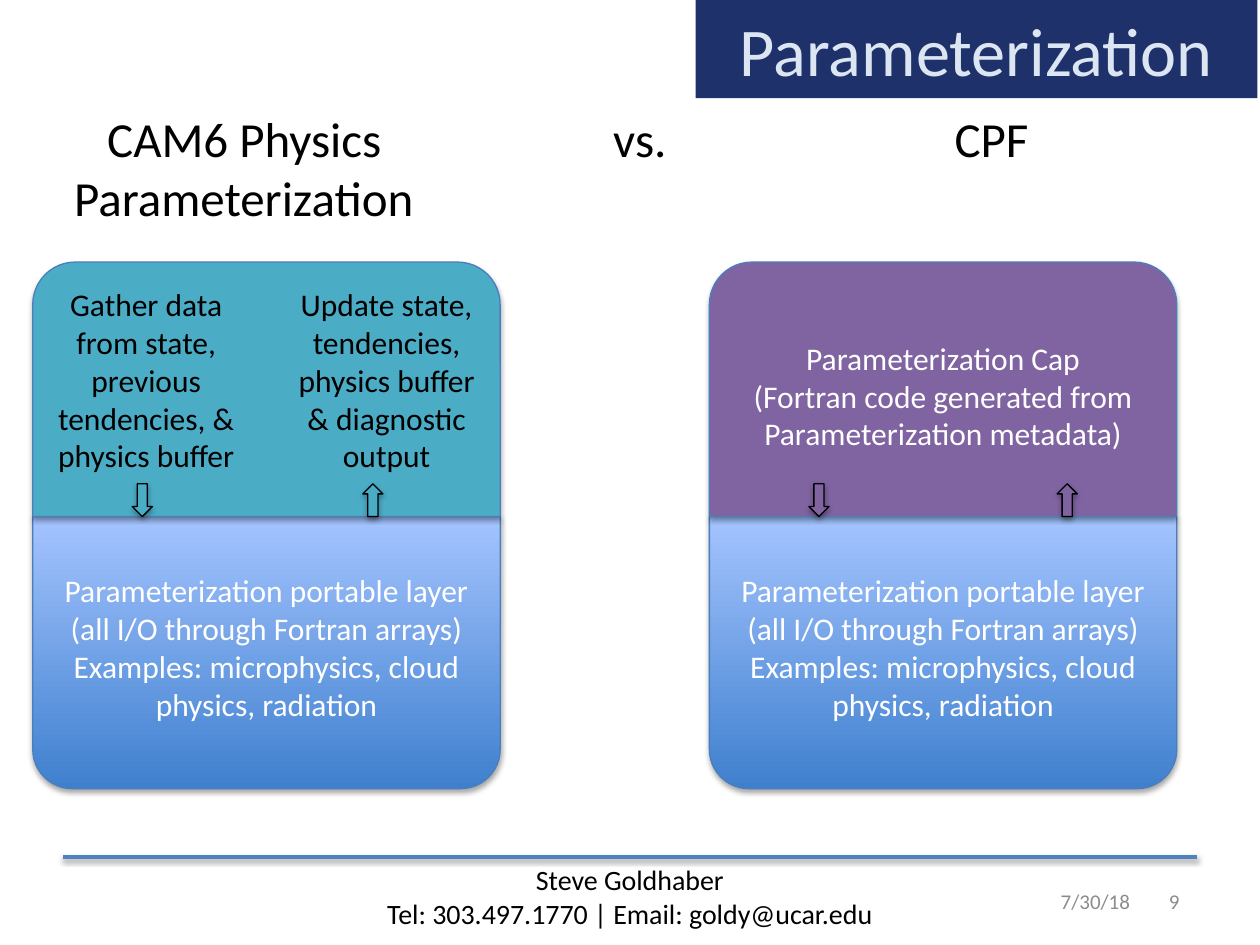
from lxml import etree
from pptx import Presentation
from pptx.dml.color import RGBColor
from pptx.enum.shapes import MSO_CONNECTOR, MSO_SHAPE
from pptx.enum.text import MSO_ANCHOR, MSO_AUTO_SIZE, PP_ALIGN
from pptx.oxml.ns import qn
from pptx.util import Inches, Pt

LEFT, CENTER, RIGHT = PP_ALIGN.LEFT, PP_ALIGN.CENTER, PP_ALIGN.RIGHT
TOP, MIDDLE = MSO_ANCHOR.TOP, MSO_ANCHOR.MIDDLE
NO_AUTOFIT = MSO_AUTO_SIZE.NONE
ROUND_END = MSO_SHAPE.ROUND_2_SAME_RECTANGLE
DOWN, UP = MSO_SHAPE.DOWN_ARROW, MSO_SHAPE.UP_ARROW
STRAIGHT = MSO_CONNECTOR.STRAIGHT

BLACK, WHITE, GRAY = "000000", "FFFFFF", "8C8C8C"
NAVY, PALE_BLUE, BLUE, OUTLINE = "1F316A", "DCE6F2", "4F81BD", "4B7EBC"
TEAL, PURPLE = "4BACC6", "8064A2"
PORTABLE_LAYER = [
    "Parameterization portable layer",
    "(all I/O through Fortran arrays)",
    "Examples: microphysics, cloud physics, radiation",
]


def color(value):
    return RGBColor.from_string(value)


def lengths(*values):
    return [Inches(value) for value in values]


def write(shape, lines, size, font_color, align=CENTER, anchor=MIDDLE):
    frame = shape.text_frame
    frame_format = {"word_wrap": True, "auto_size": NO_AUTOFIT,
                    "vertical_anchor": anchor}
    for name, value in frame_format.items():
        setattr(frame, name, value)
    frame.text = "\n".join(lines)
    for paragraph in frame.paragraphs:
        paragraph.alignment = align
        paragraph.font.name = "Calibri"
        paragraph.font.size = Pt(size)
        paragraph.font.color.rgb = color(font_color)


def add_text(slide, box, lines, size, font_color, align=CENTER, anchor=MIDDLE):
    text_box = slide.shapes.add_textbox(*lengths(*box))
    write(text_box, lines, size, font_color, align, anchor)
    return text_box


def add_shadow(shape, opacity, distance):
    properties = shape.element.spPr
    for old_effects in properties.findall(qn("a:effectLst")):
        properties.remove(old_effects)
    effects = etree.SubElement(properties, qn("a:effectLst"))
    shadow = etree.SubElement(
        effects, qn("a:outerShdw"), blurRad=str(Pt(3.1)),
        dist=str(Pt(distance)), dir="5400000", rotWithShape="0")
    shadow_color = etree.SubElement(shadow, qn("a:srgbClr"), val=BLACK)
    etree.SubElement(shadow_color, qn("a:alpha"), val=str(opacity * 1000))


def add_block(shapes, kind, box, fill, line_color):
    """Add an outlined, shadowed shape; two fill colours make a gradient."""
    shape = shapes.add_shape(kind, *lengths(*box))
    if isinstance(fill, str):
        shape.fill.solid()
        shape.fill.fore_color.rgb = color(fill)
    else:
        shape.fill.gradient()
        shape.fill.gradient_angle = 90
        for stop, stop_color in zip(shape.fill.gradient_stops, fill):
            stop.color.rgb = color(stop_color)
    shape.line.color.rgb = color(line_color)
    shape.line.width = Pt(0.75)
    add_shadow(shape, 35, 1.8)
    return shape


def set_columns(shape, count, gap, bottom_inset):
    """Flow text in columns; the bottom inset sets where a column ends."""
    shape.text_frame.margin_bottom = Inches(bottom_inset)
    body = shape.element.txBody.find(qn("a:bodyPr"))
    body.set("numCol", str(count))
    body.set("spcCol", str(Inches(gap)))


def add_title(slide, box):
    title = slide.shapes.title
    title.left, title.top, title.width, title.height = lengths(*box)
    title.fill.solid()
    title.fill.fore_color.rgb = color(NAVY)
    write(title, ["Parameterization"], 39, PALE_BLUE)


def add_heading(slide, box, tab_stops):
    lines = ["\tCAM6 Physics\tvs.\tCPF", "Parameterization"]
    heading = add_text(slide, box, lines, 28, BLACK, LEFT, TOP)
    properties = heading.text_frame.paragraphs[0]._p.get_or_add_pPr()
    tabs = etree.Element(qn("a:tabLst"))
    for position in tab_stops:
        etree.SubElement(tabs, qn("a:tab"), pos=str(Inches(position)), algn="ctr")
    # Tab stops go before the paragraph's default font
    properties.find(qn("a:defRPr")).addprevious(tabs)


def add_panel(slide, box, fill, lines, font_color, arrow_offsets):
    """Stack an upper layer on the portable layer, with arrows between."""
    left, top, width, height = box
    upper_height = 2.02
    seam = top + upper_height
    shapes = slide.shapes.add_group_shape().shapes

    # Portable layer, rounded at the bottom
    lower = add_block(shapes, ROUND_END, (left, seam, width, height - upper_height),
                      ("3F80CE", "A4C4FF"), OUTLINE)
    lower.adjustments[0], lower.adjustments[1] = 0, 0.145
    write(lower, PORTABLE_LAYER, 18, WHITE)

    # Upper layer, rounded at the top
    upper = add_block(shapes, ROUND_END, (left, top, width, upper_height),
                      fill, OUTLINE)
    write(upper, lines, 18, font_color)

    # Arrows down to and up from the portable layer
    for kind, offset in zip((DOWN, UP), arrow_offsets):
        add_block(shapes, kind, (left + offset, seam - 0.26, 0.16, 0.26),
                  fill, BLACK)
    return upper


def add_footer(slide, box):
    left, top, width, height = box
    rule = slide.shapes.add_connector(
        STRAIGHT, *lengths(left + 0.5, top, left + width - 0.5, top))
    rule.line.color.rgb = color(BLUE)
    rule.line.width = Pt(2)
    add_shadow(rule, 38, 1.6)
    add_text(slide, (left, top, width, height),
             ["Steve Goldhaber", "Tel: 303.497.1770 | Email: goldy@ucar.edu"],
             16, BLACK, anchor=TOP)
    add_text(slide, (left + 8.32, top + 0.15, 0.8, 0.4), ["7/30/18"], 12, GRAY, LEFT)
    add_text(slide, (left + 8.96, top + 0.15, 0.5, 0.4), ["9"], 12, GRAY, RIGHT)


def main():
    presentation = Presentation()
    presentation.slide_width, presentation.slide_height = lengths(10, 7.5)
    slide = presentation.slides.add_slide(presentation.slide_layouts[5])

    add_title(slide, (5.52, 0, 4.46, 0.78))
    add_heading(slide, (0.49, 0.81, 9.11, 1.04), (1.35, 4.49, 7.28))

    # CAM6 on the left, CPF on the right
    current = add_panel(
        slide, (0.26, 2.08, 3.71, 4.18), TEAL,
        ["Gather data from state, previous tendencies, & physics buffer",
         "Update state, tendencies, physics buffer & diagnostic output"],
        BLACK, (0.79, 2.62))
    set_columns(current, 2, 0.5, 0.3)
    add_panel(
        slide, (5.63, 2.08, 3.71, 4.18), PURPLE,
        ["Parameterization Cap",
         "(Fortran code generated from Parameterization metadata)"],
        WHITE, (0.79, 2.76))

    add_footer(slide, (0, 6.8, 10, 0.64))
    presentation.save("out.pptx")


if __name__ == "__main__":
    main()
